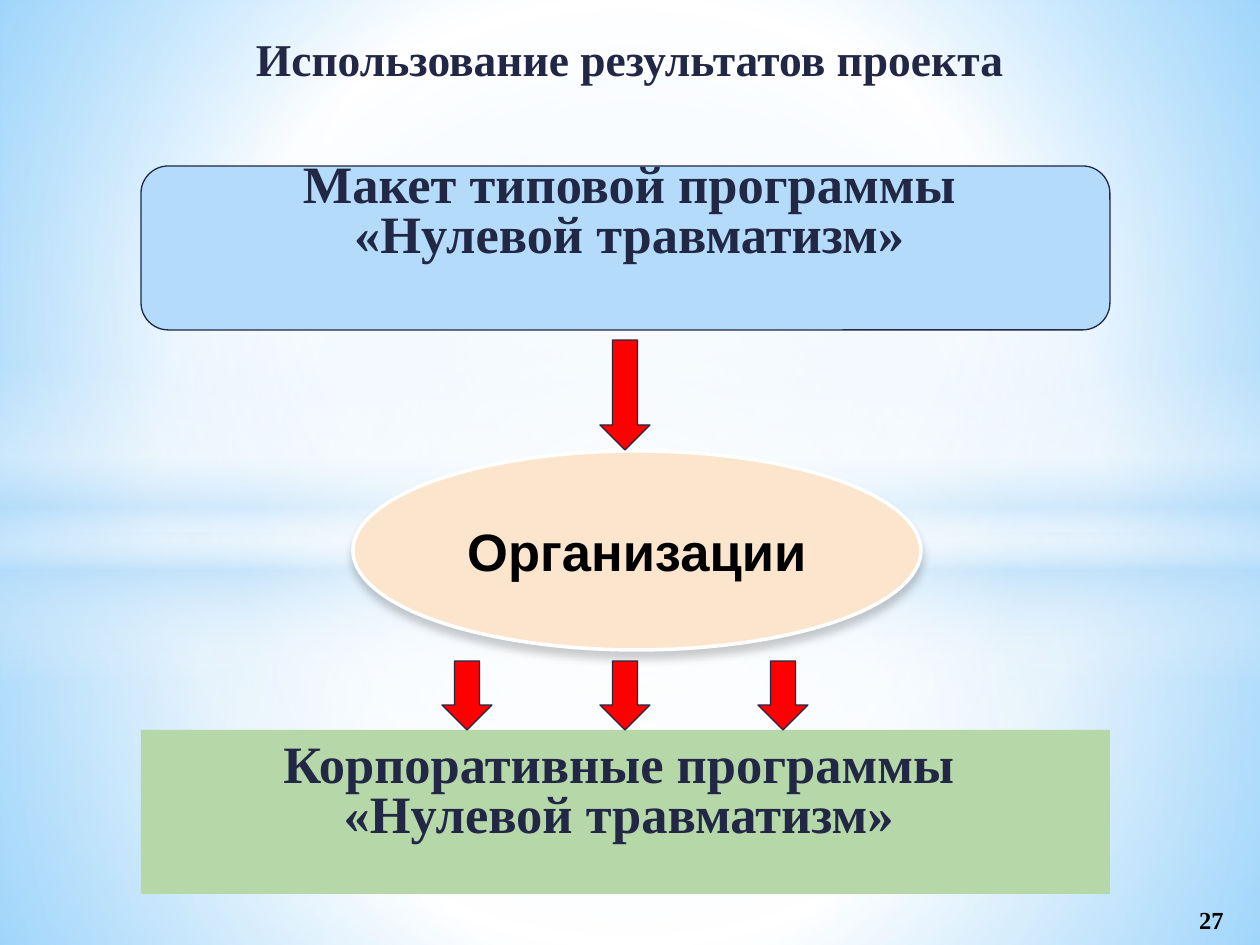
import pptx
import pptx.util
import pptx.oxml
import pptx.oxml.ns
import pptx.dml.color
import pptx.enum.shapes
import pptx.enum.text
import lxml.etree

KIND = pptx.enum.shapes.MSO_SHAPE
ANCHOR = pptx.enum.text.MSO_ANCHOR
qn = pptx.oxml.ns.qn
PX = 914400 // 126
WIDE, HIGH = 1260, 945
SERIF, SANS = "Times New Roman", "Arial"
NAVY, BLACK, WHITE, RED = "212745", "000000", "FFFFFF", "FF0000"
SKY = "B4DCFA"

# Content
TITLE = ["Использование результатов проекта"]
MODEL = ["Макет типовой программы ", "«Нулевой травматизм» "]
UNITS = ["Организации"]
PLANS = ["Корпоративные программы ", "«Нулевой травматизм» "]
PAGE = ["27"]

# Backdrop: stops are (position, colour, opacity), angle None is radial
BASE = [(0, "99D4FE", 100), (60, WHITE, 100), (100, "54BDFF", 100)]
GLOW = [
    (KIND.RECTANGLE, (0, 533, WIDE, 412), None,
     [(0, WHITE, 91), (37, WHITE, 76), (100, SKY, 79)]),
    (KIND.RECTANGLE, (0, 0, WIDE, 533), None,
     [(0, WHITE, 89), (48, WHITE, 62), (100, SKY, 79)]),
    (KIND.RECTANGLE, (0, 365, WIDE, 315), 90,
     [(0, WHITE, 0), (29, WHITE, 30), (45, SKY, 40),
      (55, WHITE, 26), (65, SKY, 60), (100, WHITE, 0)]),
    (KIND.OVAL, (0, 221, WIDE, 703), None,
     [(0, WHITE, 100), (54, WHITE, 0), (100, WHITE, 0)]),
]

# Layout
LEFT, SPAN, TALL = 141, 969, 164
MID, STEP, HEAD = 625, 158, 50
ARROWS = [(MID, 340, 110)] + [(MID + k * STEP, 661, 69) for k in (-1, 0, 1)]


def emu(*nums):
    return [pptx.util.Emu(n * PX) for n in nums]


def rgb(code):
    return pptx.dml.color.RGBColor.from_string(code)


def blend(stops, angle=None):
    """Build a gradient fill element."""
    grad = lxml.etree.Element(qn("a:gradFill"), rotWithShape="1")
    rows = lxml.etree.SubElement(grad, qn("a:gsLst"))
    for pos, code, alpha in stops:
        stop = lxml.etree.SubElement(rows, qn("a:gs"), pos=str(pos * 1000))
        tone = lxml.etree.SubElement(stop, qn("a:srgbClr"), val=code)
        if alpha < 100:
            lxml.etree.SubElement(tone, qn("a:alpha"), val=str(alpha * 1000))
    if angle is None:
        way = lxml.etree.SubElement(grad, qn("a:path"), path="circle")
        half = dict.fromkeys("ltrb", "50000")
        lxml.etree.SubElement(way, qn("a:fillToRect"), **half)
    else:
        lxml.etree.SubElement(grad, qn("a:lin"), ang=str(angle * 60000), scaled="0")
    return pptx.oxml.parse_xml(lxml.etree.tostring(grad))


def regrade(owner, stops, angle=None):
    """Swap a solid fill for a gradient."""
    old = owner.find(qn("a:solidFill"))
    owner.replace(old, blend(stops, angle))


def draw(kind, box, fill, line=None, width=0.75):
    shape = slide.shapes.add_shape(kind, *emu(*box))
    shape.shadow.inherit = False
    shape.fill.solid()
    shape.fill.fore_color.rgb = rgb(fill)
    if line:
        shape.line.color.rgb = rgb(line)
        shape.line.width = pptx.util.Pt(width)
    else:
        shape.line.fill.background()
    return shape


def write(shape, lines, size, color=NAVY, font=SERIF, anchor=ANCHOR.TOP,
          top=13, side=13, space=None, before=0):
    frame = shape.text_frame
    frame.word_wrap = True
    frame.auto_size = pptx.enum.text.MSO_AUTO_SIZE.NONE
    frame.vertical_anchor = anchor
    frame.margin_left, frame.margin_right, frame.margin_top, frame.margin_bottom = emu(
        side, side, top, 6)
    para = frame.paragraphs[0]
    para.alignment = pptx.enum.text.PP_ALIGN.CENTER
    para.space_before = pptx.util.Pt(before)
    if space:
        para.line_spacing = space
    for num, line in enumerate(lines):
        if num:
            para.add_line_break()
        run = para.add_run()
        run.text = line
        run.font.name = font
        run.font.size = pptx.util.Pt(size)
        run.font.bold = True
        run.font.color.rgb = rgb(color)


deck = pptx.Presentation()
deck.slide_width, deck.slide_height = emu(WIDE, HIGH)
slide = deck.slides.add_slide(deck.slide_layouts[5])

# Background and glow
slide.background.fill.solid()
slide.background.fill.fore_color.rgb = rgb(WHITE)
regrade(slide.element.find(".//" + qn("p:bgPr")), BASE)
for kind, box, angle, stops in GLOW:
    regrade(draw(kind, box, WHITE).element.spPr, stops, angle)

# Title, lifted above the glow
title = slide.shapes.title
title.left, title.top, title.width, title.height = emu(0, 0, WIDE, 199)
write(title, TITLE, 26, top=42, space=0.8)
slide.shapes.element.append(title.element)

# Page number
page = slide.shapes.add_textbox(*emu(1163, 895, 97, 50))
write(page, PAGE, 14, BLACK, anchor=ANCHOR.MIDDLE, top=6)

# Model programme
draw(KIND.ROUNDED_RECTANGLE, (LEFT, 166, SPAN, TALL), SKY, NAVY)
label = slide.shapes.add_textbox(*emu(198, 150, 876, 137))
write(label, MODEL, 30, space=0.8, before=4)

# Organisations, with a soft shadow
oval = draw(KIND.OVAL, (353, 451, 568, 199), "FCE5CD", WHITE, 2)
write(oval, UNITS, 30, BLACK, SANS, ANCHOR.MIDDLE, top=6)
glow = lxml.etree.SubElement(
    oval.element.spPr.find(qn("a:effectLst")), qn("a:outerShdw"),
    blurRad=str(pptx.util.Pt(5)), dist=str(pptx.util.Pt(4)),
    dir="5400000", rotWithShape="0")
tone = lxml.etree.SubElement(glow, qn("a:srgbClr"), val=BLACK)
lxml.etree.SubElement(tone, qn("a:alpha"), val="20000")

# Corporate programmes
plans = draw(KIND.RECTANGLE, (LEFT, 730, SPAN, TALL), "B6D7A8")
write(plans, PLANS, 30, space=0.8, before=4)

# Arrows
for mid, top, tall in ARROWS:
    draw(KIND.DOWN_ARROW, (mid - HEAD // 2, top, HEAD, tall), RED, NAVY)

deck.save("out.pptx")
